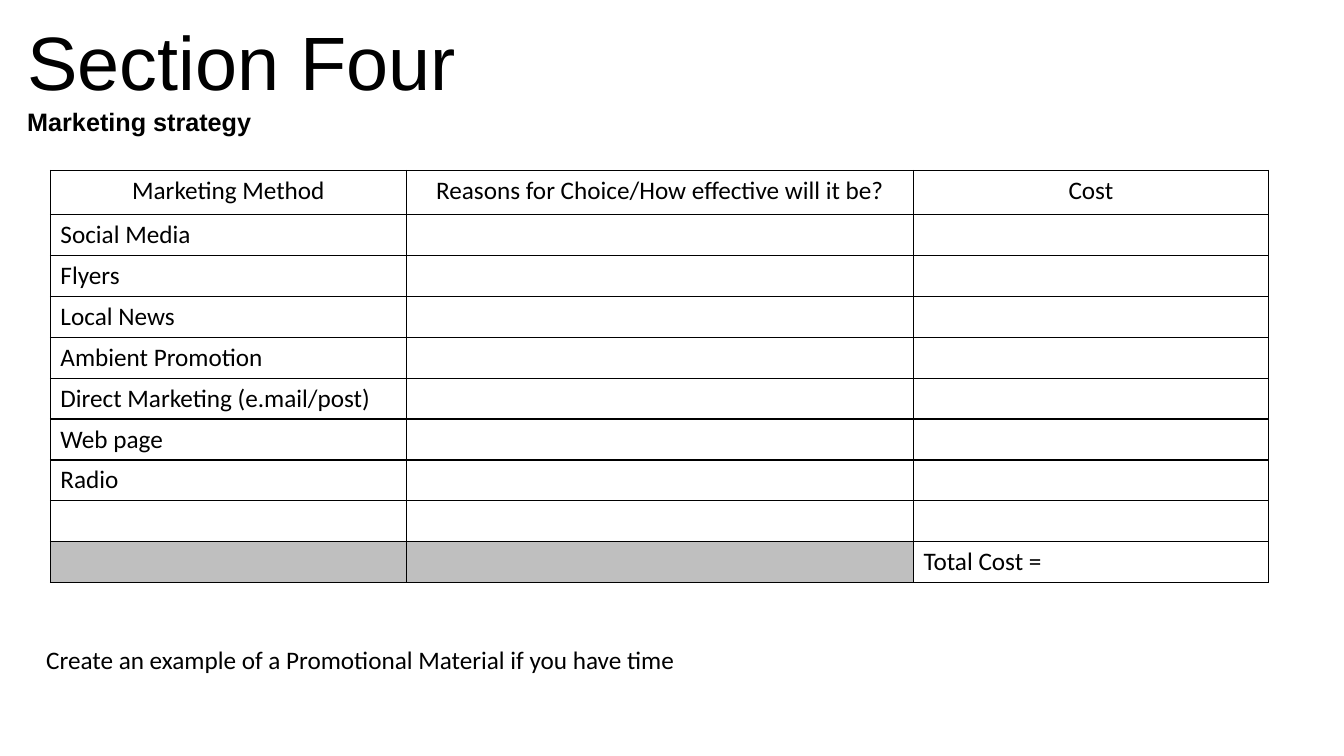
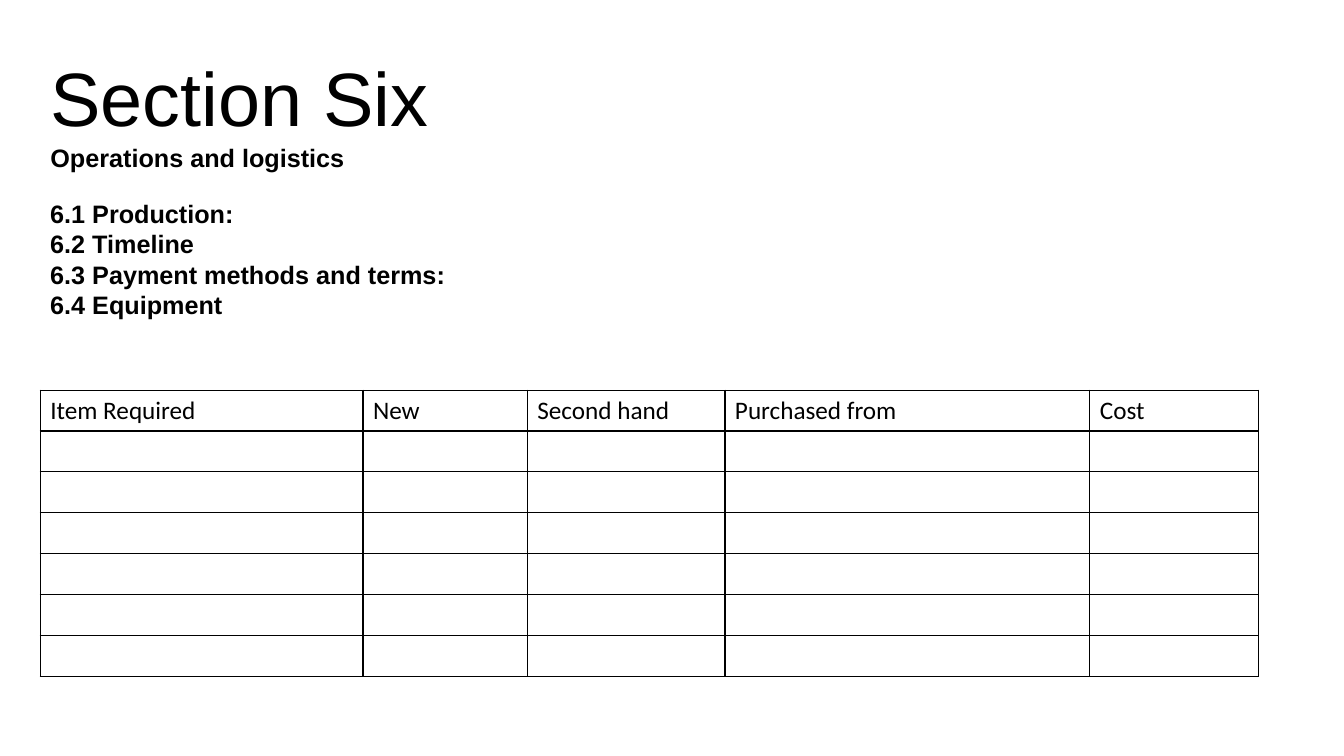
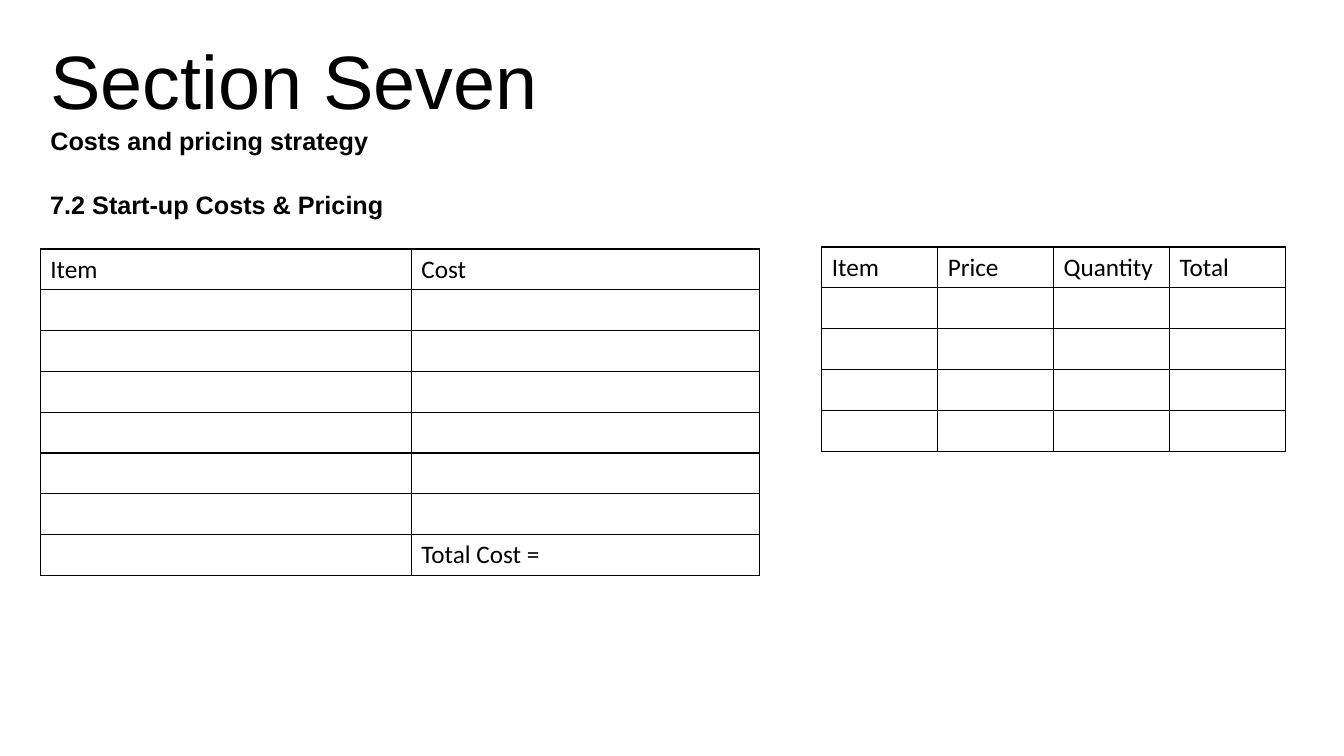
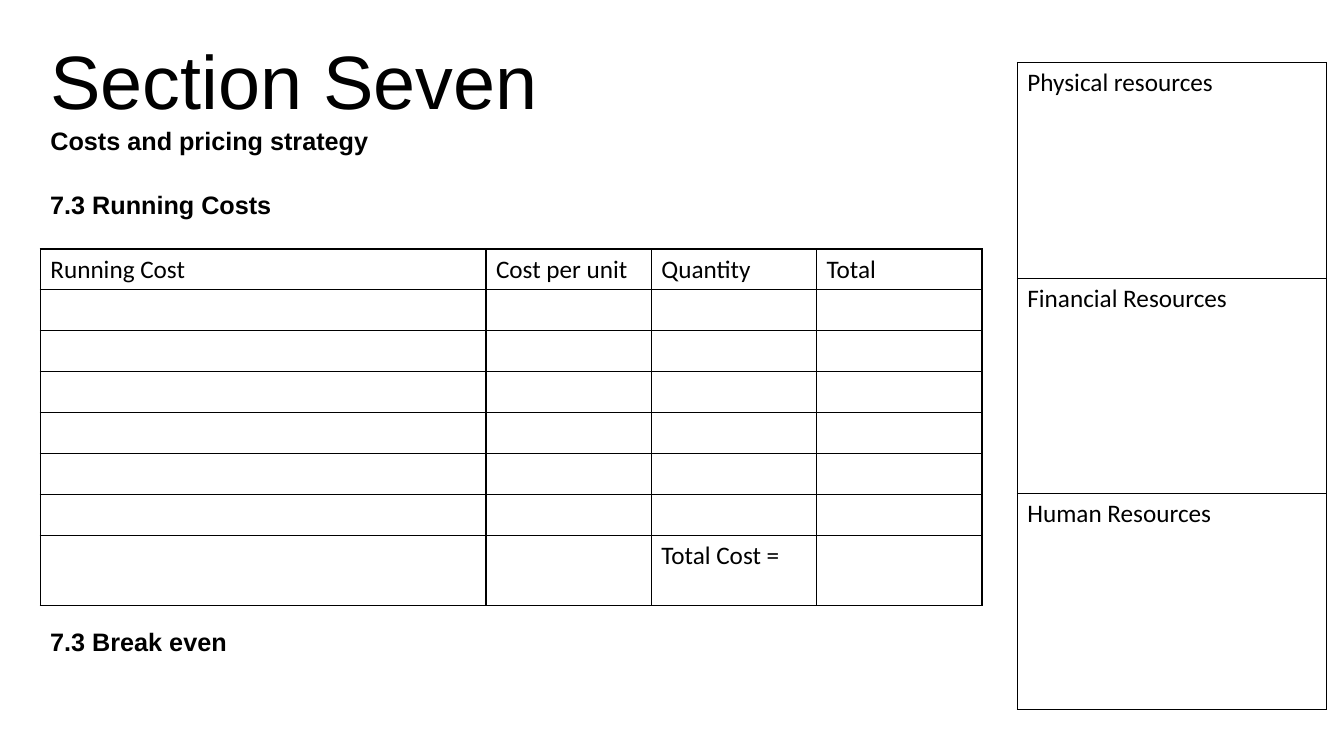
from pptx import Presentation
from pptx import util as u
from pptx.dml.color import RGBColor
from pptx.enum import text as t
from pptx.oxml import parse_xml
from pptx.oxml.ns import nsdecls

HUES = {"ink": "000000", "paper": "FFFFFF", "shade": "BFBFBF"}
HEAD = {"name": "Arial", "size": u.Pt(54), "bold": False}
SUB = {"name": "Arial", "size": u.Pt(18), "bold": True}
BODY = {"name": "Calibri", "size": u.Pt(18), "bold": False}
LEFT = t.PP_ALIGN.LEFT
MID = t.PP_ALIGN.CENTER
FRAME = {
    "word_wrap": True,
    "vertical_anchor": t.MSO_ANCHOR.TOP,
    "auto_size": t.MSO_AUTO_SIZE.SHAPE_TO_FIT_TEXT,
}
PARA = {"line_spacing": 1.0, "space_before": u.Pt(0), "space_after": u.Pt(0)}


def apply(item, look):
    for key, val in look.items():
        setattr(item, key, val)


def tint(name):
    return RGBColor.from_string(HUES[name])


def write(para, words, look, align=LEFT):
    apply(para, {**PARA, "alignment": align})
    font = para.font
    if words:
        run = para.add_run()
        run.text = words
        font = run.font
    apply(font, look)
    font.color.rgb = tint("ink")


def fill_text(frame, lines):
    apply(frame, FRAME)
    for i, (words, look) in enumerate(lines):
        para = frame.add_paragraph() if i else frame.paragraphs[0]
        write(para, words, look)


def add_title(slide, box, head, sub):
    title = slide.shapes.title
    apply(title, dict(zip(("left", "top", "width", "height"), map(u.Inches, box))))
    fill_text(title.text_frame, [(head, HEAD), (sub, SUB)])


def add_text(slide, box, lines, look):
    shape = slide.shapes.add_textbox(*map(u.Inches, box))
    fill_text(shape.text_frame, [(words, look) for words in lines])


def add_edges(cell):
    props = cell._tc.get_or_add_tcPr()
    for side in "LRTB":
        props.append(parse_xml(
            f'<a:ln{side} {nsdecls("a")} w="12700"><a:solidFill>'
            f'<a:srgbClr val="{HUES["ink"]}"/></a:solidFill></a:ln{side}>'))


def add_grid(slide, box, cols, count, words, tall={}, shaded=(), align=LEFT):
    table = slide.shapes.add_table(count, len(cols), *map(u.Inches, box)).table
    apply(table, {"first_row": False, "horz_banding": False})
    for col, width in zip(table.columns, cols):
        col.width = u.Inches(width)
    even = (box[3] - sum(tall.values())) / (count - len(tall))
    for r, row in enumerate(table.rows):
        row.height = u.Inches(tall.get(r, even))
        for c, cell in enumerate(row.cells):
            add_edges(cell)
            cell.fill.solid()
            cell.fill.fore_color.rgb = tint("shade" if (r, c) in shaded else "paper")
            write(cell.text_frame.paragraphs[0], words.get((r, c), ""), BODY,
                  LEFT if r else align)


def header(*names):
    return {(0, c): name for c, name in enumerate(names)}


def column(names, start=0):
    return {(r, 0): name for r, name in enumerate(names, start)}


def new_slide(deck, left, top, head, sub):
    slide = deck.slides.add_slide(deck.slide_layouts[5])
    add_title(slide, (left, top, 6.67, 1.31), head, sub)
    return slide


def market(deck):
    slide = new_slide(deck, 0.17, 0.1, "Section Four", "Marketing strategy")
    ways = ["Social Media", "Flyers", "Local News", "Ambient Promotion",
            "Direct Marketing (e.mail/post)", "Web page", "Radio"]
    words = {
        **header("Marketing Method", "Reasons for Choice/How effective will it be?", "Cost"),
        **column(ways, 1),
        (9, 2): "Total Cost =",
    }
    add_grid(slide, (0.5, 1.69, 12.08, 4.09), (3.53, 5.03, 3.52), 10, words,
             tall={0: 0.44}, shaded={(9, 0), (9, 1)}, align=MID)
    add_text(slide, (0.36, 6.34, 6.76, 0.4),
             ["Create an example of a Promotional Material if you have time"], BODY)


def logistics(deck):
    slide = new_slide(deck, 0.4, 0.46, "Section Six", "Operations and logistics")
    add_text(slide, (0.4, 1.92, 12.67, 1.31),
             ["6.1 Production:", "6.2 Timeline",
              "6.3 Payment methods and terms:", "6.4 Equipment"], SUB)
    add_grid(slide, (0.4, 3.87, 12.08, 2.84), (3.2, 1.63, 1.96, 3.62, 1.67), 7,
             header("Item Required", "New", "Second hand", "Purchased from", "Cost"))


def cost_slide(deck, topic):
    slide = new_slide(deck, 0.4, 0.29, "Section Seven", "Costs and pricing strategy")
    add_text(slide, (0.4, 1.83, 6.67, 0.4), [topic], SUB)
    return slide


def startup(deck):
    slide = cost_slide(deck, "7.2 Start-up Costs & Pricing")
    add_grid(slide, (0.4, 2.47, 7.13, 3.24), (3.68, 3.45), 8,
             {**header("Item", "Cost"), (7, 1): "Total Cost ="})
    add_grid(slide, (8.15, 2.45, 4.6, 2.03), [1.15] * 4, 5,
             header("Item", "Price", "Quantity", "Total"))


def running(deck):
    slide = cost_slide(deck, "7.3 Running Costs")
    add_grid(slide, (0.4, 2.47, 9.34, 3.54), [4.42] + [1.64] * 3, 8,
             {**header("Running Cost", "Cost per unit", "Quantity", "Total"),
              (7, 2): "Total Cost ="}, tall={7: 0.7})
    add_text(slide, (0.4, 6.16, 2.04, 0.4), ["7.3 Break even"], SUB)
    add_grid(slide, (10.09, 0.62, 3.07, 6.42), [3.07], 3,
             column(["Physical resources", "Financial Resources", "Human Resources"]))


def main():
    deck = Presentation()
    apply(deck, {"slide_width": u.Inches(13.33), "slide_height": u.Inches(7.5)})
    for build in (market, logistics, startup, running):
        build(deck)
    deck.save("out.pptx")


if __name__ == "__main__":
    main()
